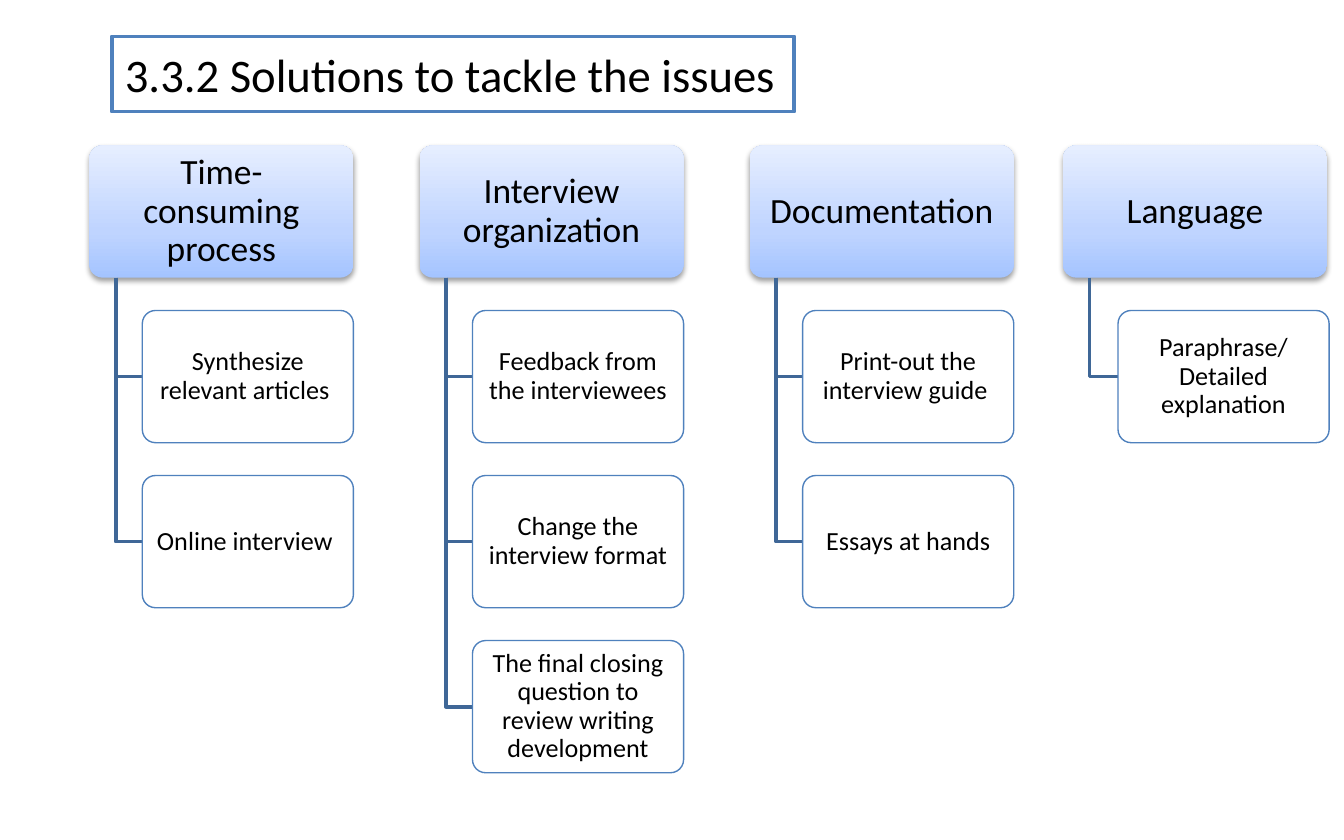
from lxml.etree import SubElement
from pptx import Presentation
from pptx.dml.color import RGBColor
from pptx.enum.shapes import MSO_SHAPE
from pptx.enum.text import MSO_ANCHOR, MSO_AUTO_SIZE, PP_ALIGN
from pptx.oxml.ns import qn
from pptx.util import Cm, Pt

HEADER_WIDTH, BOX_HEIGHT, HEADER_TOP = 4.99, 2.5, 2.75
ITEM_WIDTH, ROW_PITCH, TRUNK_OFFSET = 3.99, 3.12, 0.5
HEADER_STOPS = [(0, "A4C4FF"), (35, "BFD4FF"), (100, "E6EEFF")]

# Header, left edge, indent of the items, items
COLUMNS = [
    ("Time-consuming process", 1.69, 1.0,
     ["Synthesize relevant articles ", "Online interview "]),
    ("Interview organization", 7.93, 1.0,
     ["Feedback from the interviewees", "Change the interview format",
      "The final closing question to review writing development"]),
    ("Documentation", 14.17, 1.0,
     ["Print-out the interview guide ", "Essays at hands"]),
    ("Language", 20.09, 1.04, ["Paraphrase/Detailed explanation"]),
]


def color(hex_string):
    return RGBColor.from_string(hex_string)


def write_text(shape, text, size, align=PP_ALIGN.CENTER, margins=(0.18, 0.15),
               line_spacing=0.9):
    frame = shape.text_frame
    frame.word_wrap = True
    frame.auto_size = MSO_AUTO_SIZE.NONE
    frame.vertical_anchor = MSO_ANCHOR.MIDDLE
    frame.margin_left = frame.margin_right = Cm(margins[0])
    frame.margin_top = frame.margin_bottom = Cm(margins[1])
    paragraph = frame.paragraphs[0]
    paragraph.text = text
    paragraph.alignment = align
    paragraph.line_spacing = line_spacing
    paragraph.font.size = Pt(size)
    paragraph.font.name = "Calibri"
    paragraph.font.color.rgb = color("000000")


presentation = Presentation()
presentation.slide_width, presentation.slide_height = Cm(25.4), Cm(15.88)
slide = presentation.slides.add_slide(presentation.slide_layouts[5])

title = slide.shapes.title
title.left, title.top, title.width, title.height = Cm(2.11), Cm(0.69), Cm(12.9), Cm(1.42)
title.fill.solid()
title.fill.fore_color.rgb = color("FFFFFF")
title.line.color.rgb = color("4F81BD")
title.line.width = Pt(2)
write_text(title, "3.3.2 Solutions to tackle the issues", 25, align=PP_ALIGN.LEFT,
           margins=(0.25, 0.13), line_spacing=1.0)

for heading, left, indent, items in COLUMNS:
    header = slide.shapes.add_shape(MSO_SHAPE.ROUNDED_RECTANGLE, Cm(left), Cm(HEADER_TOP),
                                    Cm(HEADER_WIDTH), Cm(BOX_HEIGHT))
    header.adjustments[0] = 0.1
    header.line.fill.background()
    header.fill.gradient()
    header.fill.gradient_angle = 90
    properties = header._element.spPr
    stop_list = properties.find(qn("a:gradFill")).find(qn("a:gsLst"))
    for stop in list(stop_list):
        stop_list.remove(stop)
    for position, stop_color in HEADER_STOPS:
        stop = SubElement(stop_list, qn("a:gs"), pos=str(position * 1000))
        SubElement(stop, qn("a:srgbClr"), val=stop_color)
    header.shadow.inherit = False
    shadow = SubElement(properties.find(qn("a:effectLst")), qn("a:outerShdw"),
                        blurRad=str(Pt(3.1)), dist=str(Pt(1.6)), dir="5400000",
                        rotWithShape="0")
    shadow_color = SubElement(shadow, qn("a:srgbClr"), val="000000")
    SubElement(shadow_color, qn("a:alpha"), val="38000")
    write_text(header, heading, 19)

    trunk = left + TRUNK_OFFSET
    item_left = left + indent
    for row, text in enumerate(items, start=1):
        item_top = HEADER_TOP + row * ROW_PITCH
        middle = item_top + BOX_HEIGHT / 2

        builder = slide.shapes.build_freeform(Cm(trunk), Cm(HEADER_TOP + BOX_HEIGHT))
        builder.add_line_segments([(Cm(trunk), Cm(middle)), (Cm(item_left), Cm(middle))],
                                  close=False)
        branch = builder.convert_to_shape()
        branch.fill.background()
        branch.line.color.rgb = color("3F6797")
        branch.line.width = Pt(2)
        branch.shadow.inherit = False

        item = slide.shapes.add_shape(MSO_SHAPE.ROUNDED_RECTANGLE, Cm(item_left),
                                      Cm(item_top), Cm(ITEM_WIDTH), Cm(BOX_HEIGHT))
        item.adjustments[0] = 0.1
        item.fill.solid()
        item.fill.fore_color.rgb = color("FFFFFF")
        fill_color = item._element.spPr.find(qn("a:solidFill")).find(qn("a:srgbClr"))
        SubElement(fill_color, qn("a:alpha"), val="90000")
        item.line.color.rgb = color("4F81BD")
        item.line.width = Pt(0.75)
        item.shadow.inherit = False
        write_text(item, text, 14, margins=(0.15, 0.13))

presentation.save("out.pptx")
